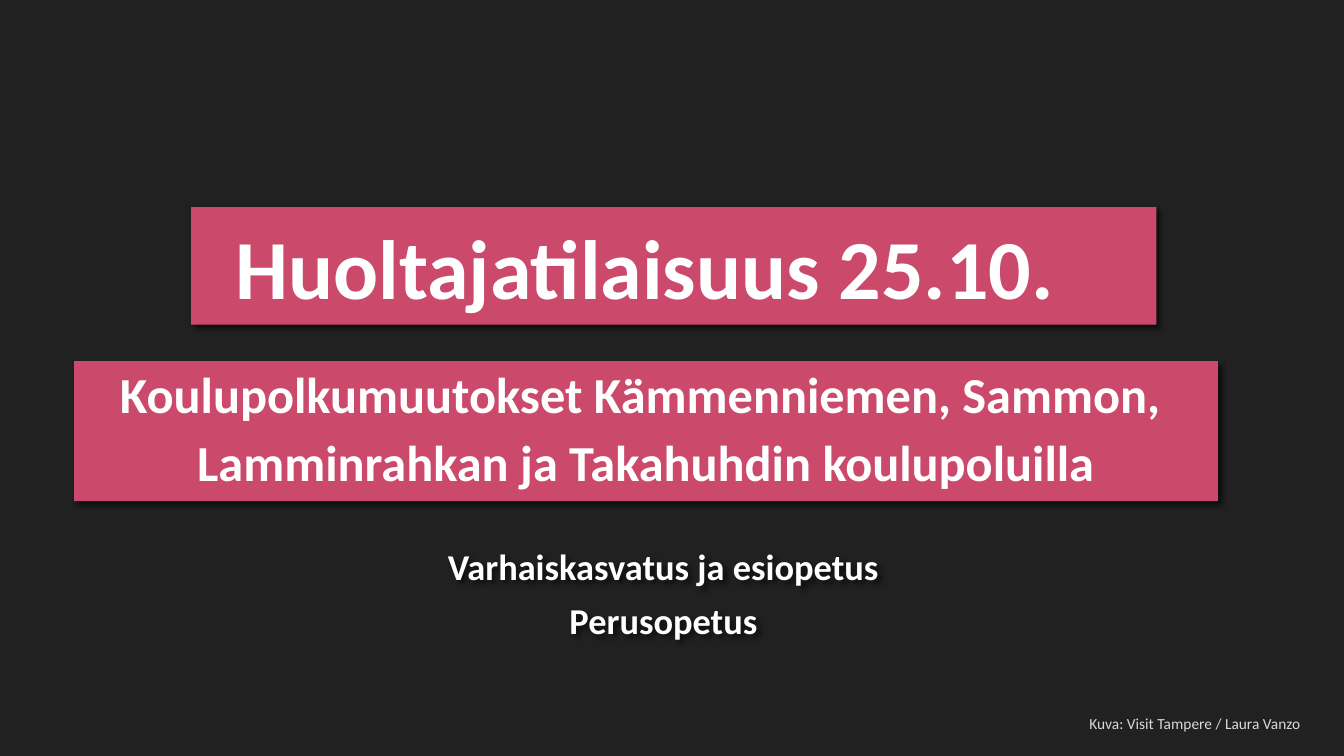
"""Build the title slide of a guardians' evening about school path changes."""
import pptx
import pptx.dml.color
import pptx.enum.shapes
import pptx.enum.text
import pptx.oxml
import pptx.oxml.ns
import pptx.util

Pt = pptx.util.Pt
RGB = pptx.dml.color.RGBColor.from_string
ALIGN = pptx.enum.text.PP_ALIGN
ANCHOR = pptx.enum.text.MSO_ANCHOR
COLORS = {"background": "212121", "banner": "CB4A6C", "text": "FFFFFF", "credit": "D9D9D9"}


def add_shadow(sp):
    sp.shadow.inherit = False
    effects = sp._element.spPr.find(pptx.oxml.ns.qn("a:effectLst"))
    effects.append(pptx.oxml.parse_xml(
        f'<a:outerShdw {pptx.oxml.ns.nsdecls("a")} blurRad="50800" dist="38100" '
        'dir="2700000" algn="tl" rotWithShape="0">'
        '<a:srgbClr val="000000"><a:alpha val="60000"/></a:srgbClr></a:outerShdw>'))


def write_text(sp, lines, size, color="text", bold=True, align=ALIGN.CENTER,
               anchor=ANCHOR.MIDDLE, wrap=True, spacing=None, gap=0, insets=None):
    tf = sp.text_frame
    tf.word_wrap = wrap
    tf.vertical_anchor = anchor
    if insets:
        tf.margin_left, tf.margin_top, tf.margin_right, tf.margin_bottom = map(Pt, insets)
    for i, line in enumerate(lines):
        p = tf.add_paragraph() if i else tf.paragraphs[0]
        p.alignment = align
        p.line_spacing = spacing
        p.space_before = Pt(gap if i else 0)
        r = p.add_run()
        r.text = line
        r.font.name = "Calibri"
        r.font.size = Pt(size)
        r.font.bold = bold
        r.font.color.rgb = RGB(COLORS[color])


def add_banner(s, box, lines, size, **fmt):
    sp = s.shapes.add_shape(pptx.enum.shapes.MSO_SHAPE.RECTANGLE, *map(Pt, box))
    sp.fill.solid()
    sp.fill.fore_color.rgb = RGB(COLORS["banner"])
    sp.line.fill.background()
    add_shadow(sp)
    write_text(sp, lines, size, wrap=False, **fmt)


def add_label(s, box, lines, size, shadow=False, **fmt):
    sp = s.shapes.add_textbox(*map(Pt, box))
    if shadow:
        add_shadow(sp)
    write_text(sp, lines, size, **fmt)


def main():
    prs = pptx.Presentation()
    prs.slide_width, prs.slide_height = Pt(960), Pt(540)
    s = prs.slides.add_slide(prs.slide_layouts[6])
    s.background.fill.solid()
    s.background.fill.fore_color.rgb = RGB(COLORS["background"])

    add_banner(s, (136.5, 148, 689.5, 84), ["Huoltajatilaisuus 25.10."], 60,
               insets=(28, 6, 69, 6))
    add_label(s, (211, 389, 526, 79), ["Varhaiskasvatus ja esiopetus", "Perusopetus"], 26,
              shadow=True, anchor=ANCHOR.TOP, spacing=0.9, gap=10)
    add_banner(s, (53, 258, 817, 100),
               ["Koulupolkumuutokset Kämmenniemen, Sammon, ",
                "Lamminrahkan ja Takahuhdin koulupoluilla"], 36,
               spacing=0.9, gap=10, insets=(28, 6, 28, 6))
    add_label(s, (771, 502, 194, 29), ["Kuva: Visit Tampere / Laura Vanzo"], 11,
              color="credit", bold=False, align=ALIGN.LEFT)
    prs.save("out.pptx")


if __name__ == "__main__":
    main()
